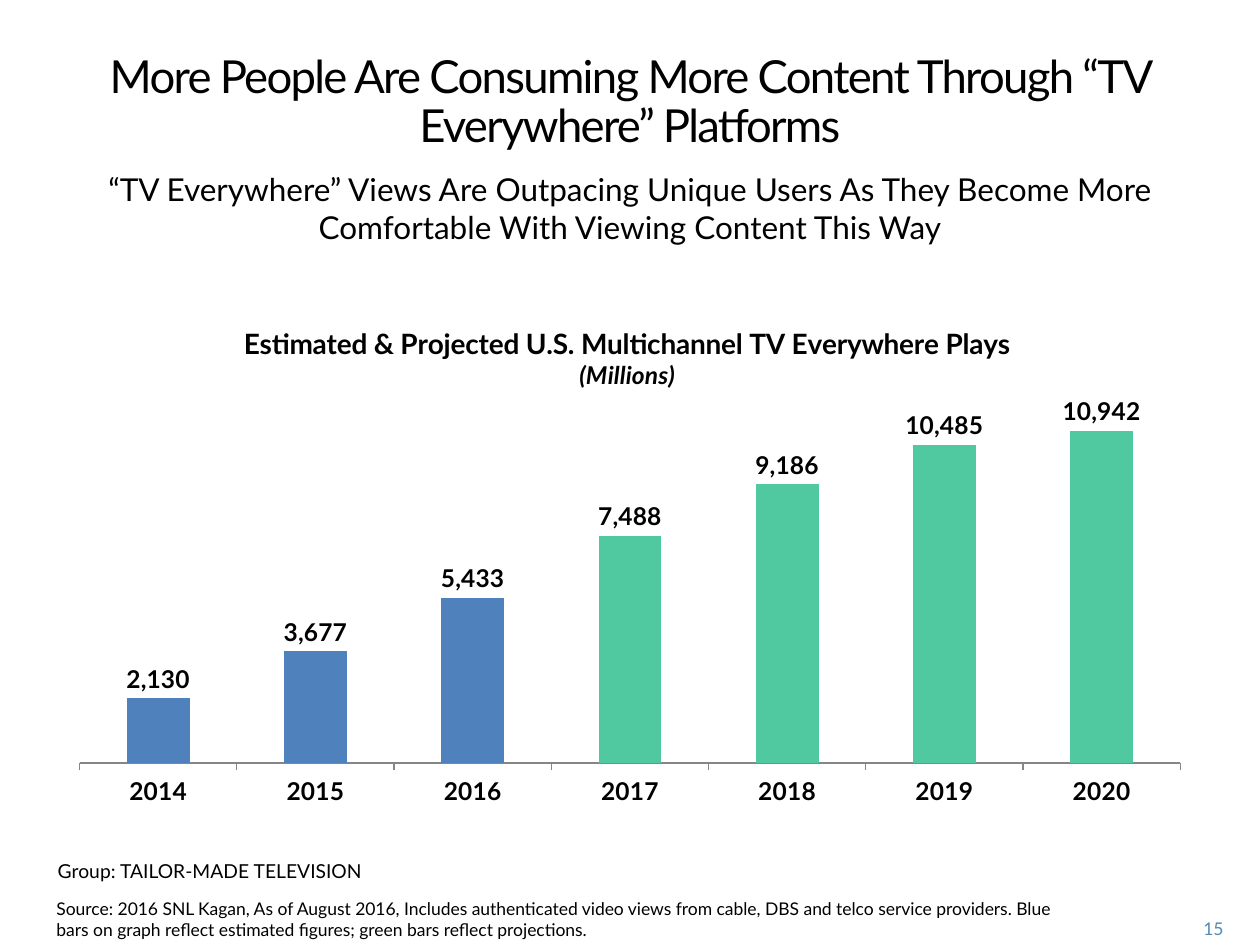
from lxml import etree
from pptx import Presentation
from pptx.chart.data import CategoryChartData
from pptx.dml.color import RGBColor
from pptx.enum.chart import XL_CHART_TYPE, XL_LABEL_POSITION, XL_TICK_LABEL_POSITION, XL_TICK_MARK
from pptx.enum.text import MSO_ANCHOR, MSO_AUTO_SIZE, PP_ALIGN
from pptx.util import Inches, Pt

COLUMN = XL_CHART_TYPE.COLUMN_CLUSTERED
ABOVE = XL_LABEL_POSITION.OUTSIDE_END
LOW = XL_TICK_LABEL_POSITION.LOW
OUT, BARE = XL_TICK_MARK.OUTSIDE, XL_TICK_MARK.NONE
TOP, MIDDLE = MSO_ANCHOR.TOP, MSO_ANCHOR.MIDDLE
LEFT, CENTER, RIGHT = PP_ALIGN.LEFT, PP_ALIGN.CENTER, PP_ALIGN.RIGHT
FIXED = MSO_AUTO_SIZE.NONE

BLACK = RGBColor(0x00, 0x00, 0x00)
BLUE = RGBColor(0x4F, 0x81, 0xBD)
GREEN = RGBColor(0x50, 0xC8, 0xA0)
GRAY = RGBColor(0x86, 0x86, 0x86)
PALE = RGBColor(0x50, 0x8A, 0xBA)
FACE = "Lato"
SPACE = "http://schemas.openxmlformats.org/drawingml/2006/chart"

YEARS = ["2014", "2015", "2016", "2017", "2018", "2019", "2020"]
PLAYS = [2130, 3677, 5433, 7488, 9186, 10485, 10942]
FIRST = YEARS.index("2017")
HEADING = "More People Are Consuming More Content Through “TV Everywhere” Platforms"
CLAIM = ("“TV Everywhere” Views Are Outpacing Unique Users As They Become More "
         "Comfortable With Viewing Content This Way")
REPORT = "Group: TAILOR-MADE TELEVISION"
SOURCE = ("Source: 2016 SNL Kagan, As of August 2016, Includes authenticated video views "
          "from cable, DBS and telco service providers. Blue bars on graph reflect "
          "estimated figures; green bars reflect projections.")


def style(font, size, color=BLACK, bold=False, italic=False):
    """Set the face, size, colour and weight of a font."""
    font.name, font.size = FACE, Pt(size)
    font.bold, font.italic = bold, italic
    font.color.rgb = color


def fill_text(shape, text, size, align=LEFT, anchor=TOP, color=BLACK):
    """Put one styled paragraph in a shape and return it."""
    frame = shape.text_frame
    frame.word_wrap, frame.auto_size = True, FIXED
    frame.vertical_anchor = anchor
    frame.text = text
    para = frame.paragraphs[0]
    para.alignment = align
    style(para.font, size, color)
    return para


def add_label(slide, box, text, size, **look):
    """Add a text box at the given box."""
    return fill_text(slide.shapes.add_textbox(*map(Inches, box)), text, size, **look)


def add_title(slide, box, text):
    """Place the title with tight letters and lines."""
    title = slide.shapes.title
    title.left, title.top, title.width, title.height = map(Inches, box)
    para = fill_text(title, text, 26, CENTER, MIDDLE)
    para.line_spacing = Pt(28)
    para.runs[0]._r.get_or_add_rPr().set("spc", "-100")


def make_layout(inner=False, **shares):
    """Build a manual layout from shares of the chart's size."""
    layout = etree.Element(f"{{{SPACE}}}layout")
    manual = etree.SubElement(layout, f"{{{SPACE}}}manualLayout")
    parts = {"layoutTarget": "inner"} if inner else {}
    parts |= {"xMode": "edge", "yMode": "edge"} | shares
    for name, value in parts.items():
        etree.SubElement(manual, f"{{{SPACE}}}{name}").set("val", str(value))
    return layout


def title_chart(chart):
    """Write the two-line chart title and place it."""
    title = chart.chart_title
    title.include_in_layout = False
    frame = title.text_frame
    frame.text = "Estimated & Projected U.S. Multichannel TV Everywhere Plays"
    style(frame.paragraphs[0].font, 16, bold=True)
    unit = frame.add_paragraph()
    unit.text = "(Millions)"
    style(unit.font, 14, bold=True, italic=True)
    head = chart.element.xpath("c:chart/c:title")[0]
    for old in head.xpath("c:layout"):
        head.remove(old)
    head.xpath("c:tx")[0].addnext(make_layout(x=0.16, y=0.05))


def set_axes(chart):
    """Show the years and hide the value scale."""
    years, scale = chart.category_axis, chart.value_axis
    years.major_tick_mark, years.minor_tick_mark = OUT, BARE
    years.tick_label_position = LOW
    years.format.line.color.rgb = GRAY
    years.format.line.width = Pt(0.75)
    style(years.tick_labels.font, 14, bold=True)
    scale.minimum_scale, scale.maximum_scale = 0, 12000
    scale.has_major_gridlines = False
    scale.visible = False


def add_plays(slide, box):
    """Add the column chart of plays by year."""
    data = CategoryChartData(number_format="#,##0")
    data.categories = YEARS
    data.add_series("Series 1", PLAYS)
    chart = slide.shapes.add_chart(COLUMN, *map(Inches, box), data).chart
    style(chart.font, 18)
    chart.has_legend = False
    title_chart(chart)
    set_axes(chart)
    plot = chart.plots[0]
    plot.gap_width, plot.vary_by_categories = 150, False
    bars = plot.series[0]
    bars.format.fill.solid()
    bars.format.fill.fore_color.rgb = BLUE
    for spot in range(FIRST, len(YEARS)):
        fill = bars.points[spot].format.fill
        fill.solid()
        fill.fore_color.rgb = GREEN
    labels = bars.data_labels
    labels.show_value, labels.position = True, ABOVE
    labels.number_format, labels.number_format_is_linked = "#,##0", False
    style(labels.font, 14, bold=True)
    area = chart.element.xpath("c:chart/c:plotArea")[0]
    for old in area.xpath("c:layout"):
        area.remove(old)
    area.insert(0, make_layout(True, x=0.02, y=0.2, w=0.96, h=0.7))


def add_footer(slide):
    """Add the report name, source note and page number."""
    add_label(slide, (0.36, 6.77, 3.08, 0.47), REPORT, 11)
    add_label(slide, (0.35, 7.08, 8.1, 0.26), SOURCE, 10)
    add_label(slide, (9.2, 7.24, 0.61, 0.25), "15", 10,
              align=RIGHT, anchor=MIDDLE, color=PALE)


def main():
    """Build the slide and save it."""
    deck = Presentation()
    deck.slide_width, deck.slide_height = Inches(10), Inches(7.5)
    slide = deck.slides.add_slide(deck.slide_layouts[5])
    add_title(slide, (0.4, 0.33, 9.2, 0.97), HEADING)
    add_label(slide, (0.4, 1.3, 9.2, 0.71), CLAIM, 18, align=CENTER)
    add_plays(slide, (0.45, 2.34, 9.1, 4.13))
    add_footer(slide)
    deck.save("out.pptx")


if __name__ == "__main__":
    main()
